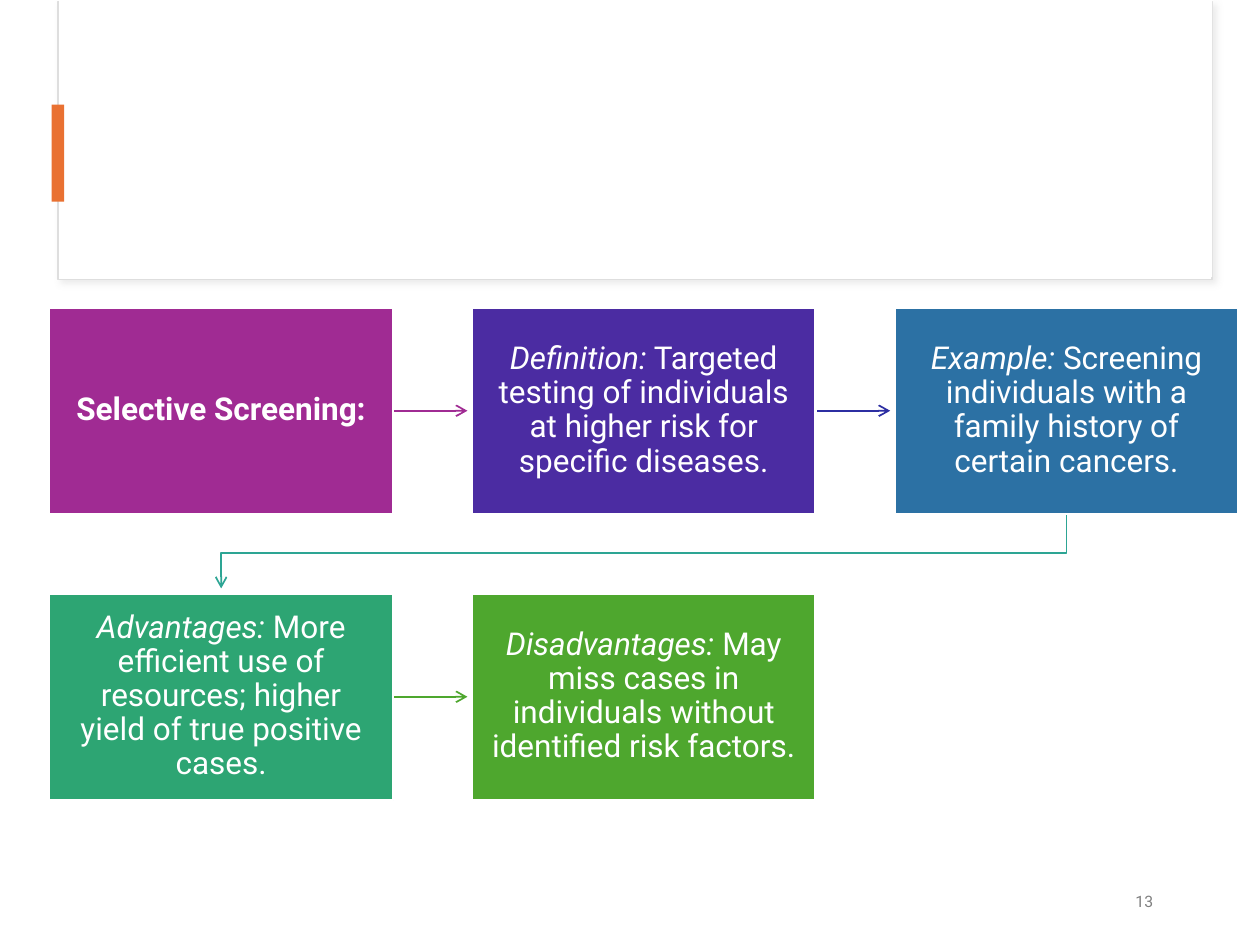
from lxml import etree
from pptx import Presentation
from pptx.dml.color import RGBColor
from pptx.enum.shapes import MSO_CONNECTOR, MSO_SHAPE
from pptx.enum.text import MSO_ANCHOR, PP_ALIGN
from pptx.oxml.ns import qn
from pptx.util import Inches, Pt

RECTANGLE = MSO_SHAPE.RECTANGLE
STRAIGHT = MSO_CONNECTOR.STRAIGHT
MIDDLE = MSO_ANCHOR.MIDDLE
CENTER, RIGHT = PP_ALIGN.CENTER, PP_ALIGN.RIGHT

COLORS = {
    "white": "FFFFFF", "border": "DEDEDE", "shadow": "D9D9D9",
    "accent": "E97132", "number": "808080",
    "purple": "A02B93", "violet": "4B2CA2", "blue": "2C71A4",
    "teal": "2DA573", "green": "4EA72E",
    "indigo arrow": "2C2EA2", "teal arrow": "2DA594",
}

# Column, row, fill, runs of (text, style)
STEPS = [
    (0, 0, "purple", [("Selective Screening:", "bold")]),
    (1, 0, "violet", [("Definition:", "italic"),
                      (" Targeted testing of individuals at higher risk for specific diseases.", "")]),
    (2, 0, "blue", [("Example:", "italic"),
                    (" Screening individuals with a family history of certain cancers.", "")]),
    (0, 1, "teal", [("Advantages:", "italic"),
                    (" More efficient use of resources; higher yield of true positive cases.", "")]),
    (1, 1, "green", [("Disadvantages:", "italic"),
                     (" May miss cases in individuals without identified risk factors.", "")]),
]
# Column and row of the box each arrow leaves to the right
ARROWS = [(0, 0, "purple"), (1, 0, "indigo arrow"), (0, 1, "green")]


class FlowSlide:
    font = "Roboto"
    left, top = 0.39, 2.44
    column_step, row_step = 3.355, 2.27
    box_width, box_height = 2.73, 1.64
    arrow_length = 0.59

    def __init__(self, slide):
        self.slide = slide

    def cell(self, column, row):
        """Return the left and top of a grid box in inches."""
        return self.left + column * self.column_step, self.top + row * self.row_step

    def color(self, name):
        return RGBColor.from_string(COLORS[name])

    def rectangle(self, left, top, width, height, fill, line=None, line_width=1.5):
        shape = self.slide.shapes.add_shape(
            RECTANGLE, Inches(left), Inches(top), Inches(width), Inches(height))
        shape.shadow.inherit = False
        shape.fill.solid()
        shape.fill.fore_color.rgb = self.color(fill)
        if line:
            shape.line.color.rgb = self.color(line)
            shape.line.width = Pt(line_width)
        else:
            shape.line.fill.background()
        return shape

    def drop_shadow(self, shape):
        effects = shape.element.spPr.find(qn("a:effectLst"))
        shadow = etree.SubElement(
            effects, qn("a:outerShdw"), blurRad=str(Pt(4)), dist=str(Pt(3)),
            dir=str(45 * 60000), algn="tl", rotWithShape="0")
        color = etree.SubElement(shadow, qn("a:srgbClr"), val=COLORS["shadow"])
        etree.SubElement(color, qn("a:alpha"), val="50000")

    def add_run(self, paragraph, text, size, color, style=""):
        run = paragraph.add_run()
        run.text = text
        run.font.name = self.font
        run.font.size = Pt(size)
        run.font.color.rgb = self.color(color)
        run.font.bold = style == "bold"
        run.font.italic = style == "italic"

    def step(self, column, row, fill, runs):
        shape = self.rectangle(*self.cell(column, row), self.box_width,
                               self.box_height, fill, "white")
        frame = shape.text_frame
        frame.word_wrap = True
        frame.vertical_anchor = MIDDLE
        frame.margin_left = frame.margin_right = Inches(0.13)
        frame.margin_top = frame.margin_bottom = Inches(0.14)
        paragraph = frame.paragraphs[0]
        paragraph.alignment = CENTER
        paragraph.line_spacing = 0.9
        for text, style in runs:
            self.add_run(paragraph, text, 18, "white", style)

    def arrow_line(self, shape, color):
        shape.line.color.rgb = self.color(color)
        shape.line.width = Pt(1)
        outline = shape.element.spPr.find(qn("a:ln"))
        etree.SubElement(outline, qn("a:tailEnd"), type="arrow")

    def arrow_right(self, column, row, color):
        left, top = self.cell(column, row)
        start, middle = left + self.box_width, Inches(top + self.box_height / 2)
        connector = self.slide.shapes.add_connector(
            STRAIGHT, Inches(start), middle, Inches(start + self.arrow_length), middle)
        self.arrow_line(connector, color)
        etree.SubElement(connector.element.spPr, qn("a:effectLst"))

    def arrow_to_next_row(self, column, row, color):
        """Draw an elbow from below a box to above the first box of the next row."""
        left, top = self.cell(column, row)
        start_x = left + self.box_width / 2
        end_x = self.left + self.box_width / 2
        bottom = top + self.box_height
        turn = bottom + 0.31
        builder = self.slide.shapes.build_freeform(Inches(start_x), Inches(bottom))
        points = [(start_x, turn), (end_x, turn), (end_x, bottom + self.arrow_length)]
        builder.add_line_segments([(Inches(x), Inches(y)) for x, y in points], close=False)
        shape = builder.convert_to_shape()
        shape.shadow.inherit = False
        shape.fill.background()
        self.arrow_line(shape, color)

    def page_number(self, text):
        box = self.slide.shapes.add_textbox(Inches(7), Inches(6.95), Inches(2.25), Inches(0.4))
        frame = box.text_frame
        frame.word_wrap = True
        frame.vertical_anchor = MIDDLE
        paragraph = frame.paragraphs[0]
        paragraph.alignment = RIGHT
        paragraph.space_after = Pt(6)
        self.add_run(paragraph, text, 9, "number")


def main():
    presentation = Presentation()
    presentation.slide_width, presentation.slide_height = Inches(10), Inches(7.5)
    flow = FlowSlide(presentation.slides.add_slide(presentation.slide_layouts[6]))

    panel = flow.rectangle(0.46, 0.01, 9.16, 2.21, "white", "border", 0.75)
    flow.drop_shadow(panel)
    flow.rectangle(0.47, 0, 9.15, 2.2, "white")
    flow.rectangle(0.41, 0.83, 0.1, 0.77, "accent")
    flow.page_number("13")

    for arrow in ARROWS:
        flow.arrow_right(*arrow)
    flow.arrow_to_next_row(2, 0, "teal arrow")
    for step in STEPS:
        flow.step(*step)

    presentation.save("out.pptx")


if __name__ == "__main__":
    main()
